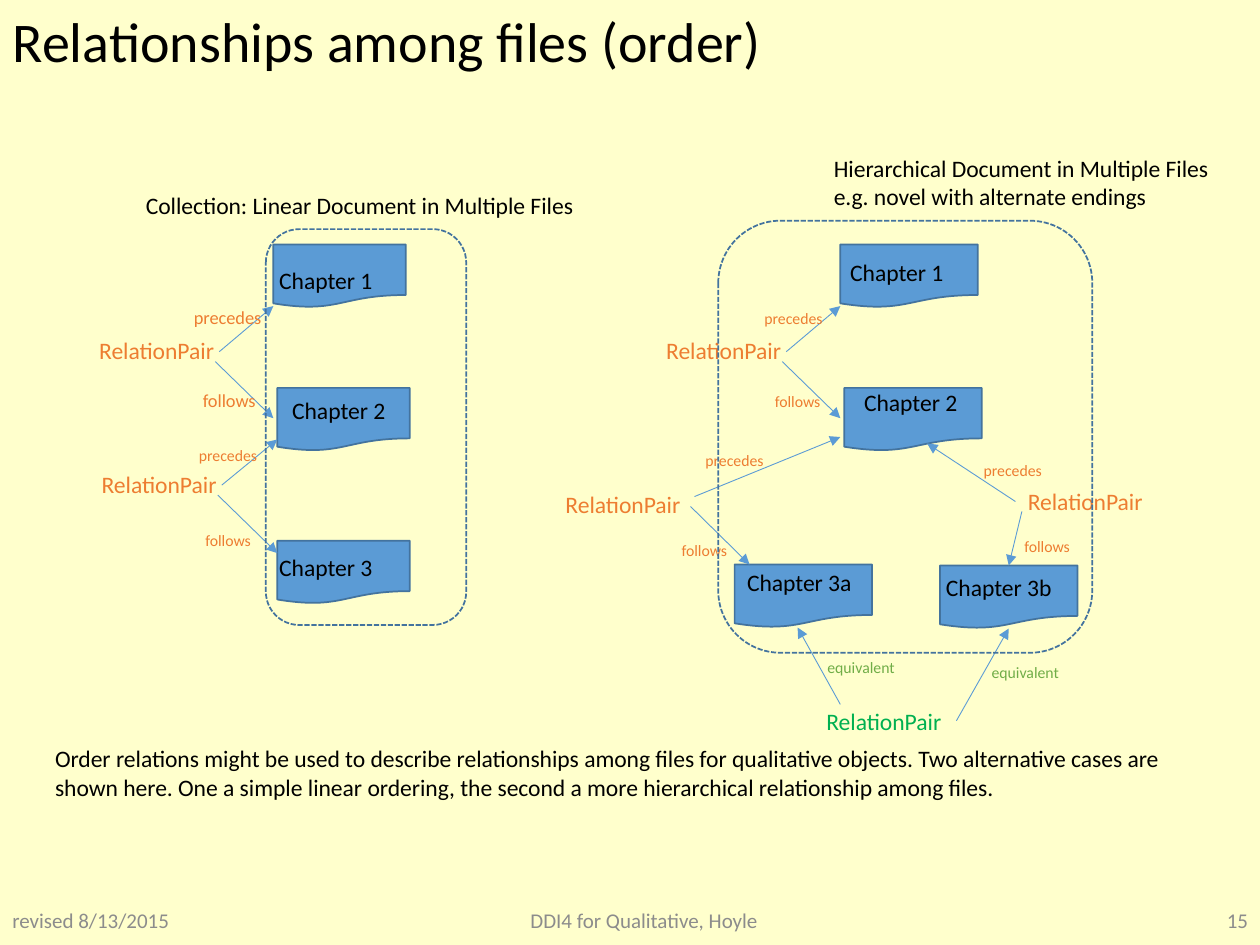
import pptx
import pptx.util
import pptx.dml.color
import pptx.enum.dml
import pptx.enum.shapes
import pptx.enum.text
import pptx.oxml

Cm = pptx.util.Cm
Pt = pptx.util.Pt
Align = pptx.enum.text.PP_ALIGN
Anchor = pptx.enum.text.MSO_ANCHOR
AutoSize = pptx.enum.text.MSO_AUTO_SIZE
Shapes = pptx.enum.shapes.MSO_SHAPE

FONT = "Calibri"
BLACK, GREY, ORANGE, GREEN, LIGHT_GREEN = "000000", "8C8C8C", "ED7D31", "00B050", "70AD47"
BLUE, DARK_BLUE, CREAM = "5B9BD5", "43739E", "FFFFCC"
BODY, MEDIUM, SMALL = 13.5, 10.5, 9
DOCUMENT_HEIGHT = 1.27
TOP, BOTTOM = 0, 2

TITLE = "Relationships among files (order)"
FOOTERS = [
    ("revised 8/13/2015", 0, 5.72, Align.LEFT),
    ("DDI4 for Qualitative, Hoyle", 8.69, 8.59, Align.CENTER),
    ("15", 19.69, 5.72, Align.RIGHT),
]
NOTES = [
    (["Collection: Linear Document in Multiple Files"], (2.69, 3.73, 9.27, 0.84)),
    (["Hierarchical Document in Multiple Files", "e.g. novel with alternate endings"],
     (16.56, 2.97, 8.18, 1.42)),
    (["Order relations might be used to describe relationships among files for qualitative "
      "objects. Two alternative cases are",
      "shown here. One a simple linear ordering, the second a more hierarchical relationship "
      "among files."], (0.86, 14.88, 23.24, 1.42)),
]
COLLECTIONS = [
    {"frame": (5.36, 4.62, 4.04, 7.98), "document_width": 2.67, "chapters": [
        ("Chapter 1", (5.51, 4.93), (5.38, 5.23)),
        ("Chapter 2", (5.59, 7.82), (5.64, 7.85)),
        ("Chapter 3", (5.59, 10.9), (5.38, 11.02)),
    ]},
    {"frame": (14.48, 4.45, 7.54, 8.71), "document_width": 2.77, "chapters": [
        ("Chapter 1", (16.94, 4.93), (16.89, 5.08)),
        ("Chapter 2", (17.02, 7.82), (17.17, 7.7)),
        ("Chapter 3a", (14.81, 11.38), (14.81, 11.33)),
        ("Chapter 3b", (18.95, 11.4), (18.82, 11.43)),
    ]},
]
RELATIONS = [
    ((1.75, 6.65), ORANGE, ORANGE, MEDIUM, [
        ("precedes", (3.66, 6.05), (4.42, 7.09), (5.51, 6.17)),
        ("follows", (3.84, 7.72), (4.34, 7.29), (5.51, 8.43))]),
    ((1.8, 9.35), ORANGE, ORANGE, SMALL, [
        ("precedes", (3.76, 8.86), (4.47, 9.78), (5.59, 8.86)),
        ("follows", (3.89, 10.57), (4.39, 9.98), (5.59, 11.15))]),
    ((13.18, 6.65), ORANGE, ORANGE, SMALL, [
        ("precedes", (15.16, 6.1), (15.85, 7.09), (16.94, 6.17)),
        ("follows", (15.37, 7.77), (15.77, 7.29), (16.94, 8.43))]),
    ((20.47, 9.7), ORANGE, ORANGE, SMALL, [
        ("precedes", (19.58, 9.17), (20.47, 10.11), (18.69, 8.94)),
        ("follows", (20.4, 10.69), (20.6, 10.31), ("Chapter 3b", TOP))]),
    ((11.15, 9.75), ORANGE, ORANGE, SMALL, [
        ("precedes", (13.97, 8.97), (14, 10.01), (16.94, 8.81)),
        ("follows", (13.49, 10.77), (13.92, 10.21), (15.11, 11.38))]),
    ((16.41, 14.12), GREEN, LIGHT_GREEN, SMALL, [
        ("equivalent", (16.43, 13.13), (16.94, 14.2), (16.08, 12.65)),
        ("equivalent", (19.74, 13.23), (19.28, 14.53), ("Chapter 3b", BOTTOM))]),
]
LABEL_HEIGHTS = {BODY: 0.84, MEDIUM: 0.71, SMALL: 0.64}
LABEL_WIDTHS = {
    ("RelationPair", BODY): 2.87, ("Chapter 1", BODY): 2.41, ("Chapter 2", BODY): 2.41,
    ("Chapter 3", BODY): 2.41, ("Chapter 3a", BODY): 2.67, ("Chapter 3b", BODY): 2.67,
    ("precedes", MEDIUM): 1.91, ("follows", MEDIUM): 1.6,
    ("precedes", SMALL): 1.7, ("follows", SMALL): 1.45, ("equivalent", SMALL): 1.91,
}


def paint(target, color):
    if hasattr(target, "solid"):
        target.solid()
        target = target.fore_color
    target.rgb = pptx.dml.color.RGBColor.from_string(color)


def write(frame, lines, size, color, align=Align.LEFT):
    for index, line in enumerate(lines):
        para = frame.paragraphs[0] if index == 0 else frame.add_paragraph()
        para.alignment = align
        span = para.add_run()
        span.text = line
        span.font.name = FONT
        span.font.size = Pt(size)
        paint(span.font.color, color)


def add_text(page, lines, place, size, color, align=Align.LEFT):
    box = page.shapes.add_textbox(*map(Cm, place))
    box.text_frame.word_wrap = False
    box.text_frame.auto_size = AutoSize.SHAPE_TO_FIT_TEXT
    write(box.text_frame, lines, size, color, align)
    return box


def add_label(page, text, corner, size, color):
    place = (*corner, LABEL_WIDTHS[text, size], LABEL_HEIGHTS[size])
    add_text(page, [text], place, size, color)


def add_outline(page, kind, place):
    shape = page.shapes.add_shape(kind, *map(Cm, place))
    shape.shadow.inherit = False
    paint(shape.line.fill, DARK_BLUE)
    shape.line.width = Pt(1)
    return shape


def add_arrow(page, start, end, documents):
    joined = isinstance(end[0], str)
    finish = start if joined else end
    arrow = page.shapes.add_connector(
        pptx.enum.shapes.MSO_CONNECTOR.STRAIGHT, *map(Cm, (*start, *finish)))
    if joined:
        arrow.end_connect(documents[end[0]], end[1])
    paint(arrow.line.fill, BLUE)
    arrow.line.width = Pt(0.5)
    namespace = pptx.oxml.ns.nsdecls("a")
    arrow.line._get_or_add_ln().append(
        pptx.oxml.parse_xml(f'<a:tailEnd {namespace} type="triangle"/>'))
    arrow._element.spPr.append(pptx.oxml.parse_xml(f"<a:effectLst {namespace}/>"))


def main():
    deck = pptx.Presentation()
    deck.slide_width, deck.slide_height = Cm(25.4), Cm(19.05)
    page = deck.slides.add_slide(deck.slide_layouts[5])
    paint(page.background.fill, CREAM)

    title = page.shapes.title
    title.left, title.top, title.width, title.height = map(Cm, (0, 0.03, 20.96, 1.73))
    title.text_frame.auto_size = AutoSize.NONE
    title.text_frame.vertical_anchor = Anchor.MIDDLE
    write(title.text_frame, [TITLE], 32, BLACK)
    title.text_frame.paragraphs[0].line_spacing = 0.9

    for text, left, width, align in FOOTERS:
        box = add_text(page, [text], (left, 18.03, width, 1.02), 12, GREY, align)
        box.text_frame.word_wrap = True
        box.text_frame.auto_size = AutoSize.NONE
        box.text_frame.vertical_anchor = Anchor.MIDDLE

    for lines, place in NOTES:
        add_text(page, lines, place, BODY, BLACK)

    documents = {}
    for collection in COLLECTIONS:
        size = (collection["document_width"], DOCUMENT_HEIGHT)
        for name, corner, caption in collection["chapters"]:
            documents[name] = add_outline(page, Shapes.FLOWCHART_DOCUMENT, (*corner, *size))
            paint(documents[name].fill, BLUE)
            add_label(page, name, caption, BODY, BLACK)

    for corner, color, label_color, size, links in RELATIONS:
        add_label(page, "RelationPair", corner, BODY, color)
        for label, label_corner, start, end in links:
            add_arrow(page, start, end, documents)
            add_label(page, label, label_corner, size, label_color)

    for collection in COLLECTIONS:
        frame = add_outline(page, Shapes.ROUNDED_RECTANGLE, collection["frame"])
        frame.fill.background()
        frame.line.dash_style = pptx.enum.dml.MSO_LINE.SQUARE_DOT

    deck.save("out.pptx")


if __name__ == "__main__":
    main()
